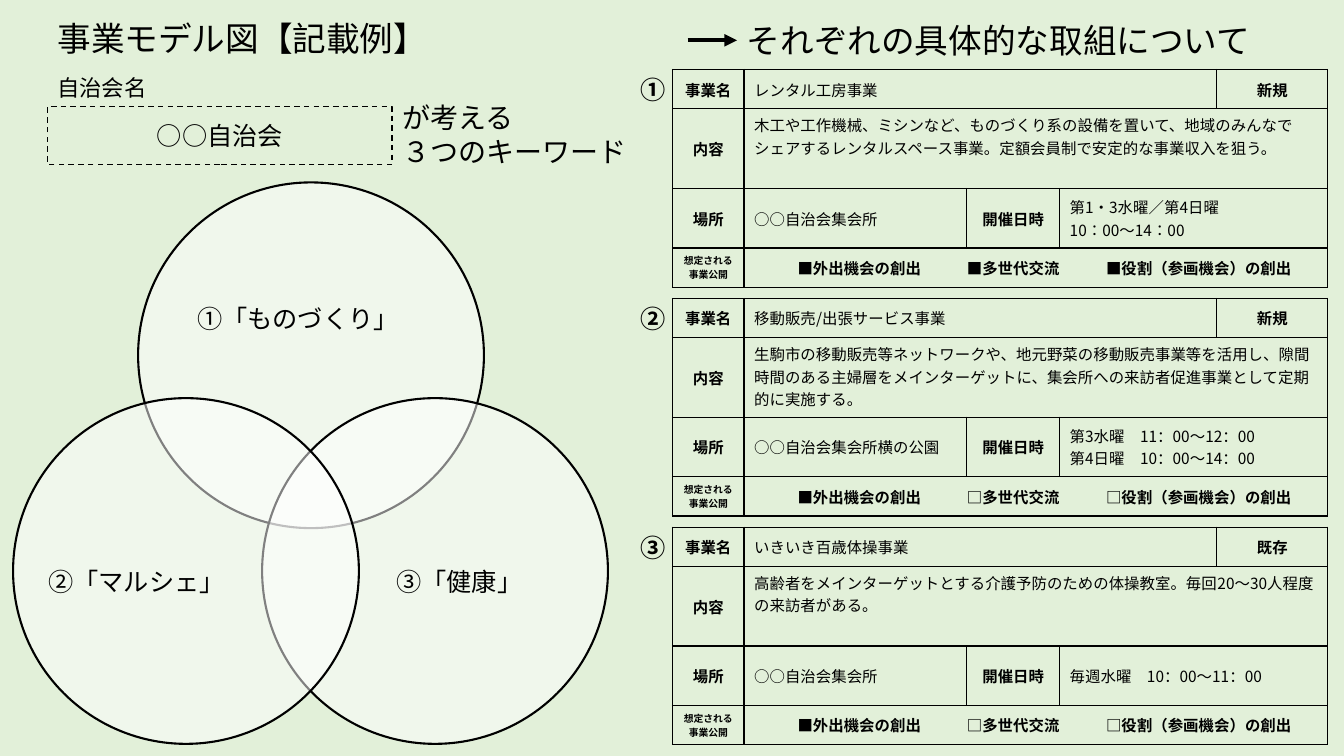
import pptx
import pptx.util
import pptx.dml.color
import pptx.enum.dml
import pptx.enum.shapes
import pptx.enum.text
import pptx.oxml.ns
from lxml import etree

PX = 9144  # EMU, 100 px to the inch
COLORS = {"background": "E2F0D9", "ink": "000000", "circle": "FFFFFF"}
ARIAL, NOTO = "Arial", "Noto Sans CJK JP"
ALIGN = pptx.enum.text.PP_ALIGN
ANCHOR = pptx.enum.text.MSO_ANCHOR
SHAPE = pptx.enum.shapes.MSO_SHAPE

COLUMNS = [71, 221, 92, 156, 110]
ROWS = [39, 79, 59, 39]
TABLE_LEFT, TABLE_TOP, TABLE_PITCH = 667, 69, 227
EFFECT_STOPS = [43, 211, 349]
EFFECTS = ["外出機会の創出", "多世代交流", "役割（参画機会）の創出"]

PROJECTS = [
    dict(number="①", name="レンタル工房事業", status="新規",
         content="木工や工作機械、ミシンなど、ものづくり系の設備を置いて、地域のみんなで"
                 "シェアするレンタルスペース事業。定額会員制で安定的な事業収入を狙う。",
         place="○○自治会集会所", schedule="第1・3水曜／第4日曜\n10：00～14：00", marks="■■■"),
    dict(number="②", name="移動販売/出張サービス事業", status="新規",
         content="生駒市の移動販売等ネットワークや、地元野菜の移動販売事業等を活用し、隙間"
                 "時間のある主婦層をメインターゲットに、集会所への来訪者促進事業として定期的に実施する。",
         place="○○自治会集会所横の公園",
         schedule="第3水曜　11：00～12：00\n第4日曜　10：00～14：00", marks="■□□"),
    dict(number="③", name="いきいき百歳体操事業", status="既存",
         content="高齢者をメインターゲットとする介護予防のための体操教室。毎回20～30人程度の来訪者がある。",
         place="○○自治会集会所", schedule="毎週水曜　10：00～11：00", marks="■□□"),
]

# circle left, circle top, keyword, keyword box
KEYWORDS = [
    (137, 181, "①「ものづくり」　", (182, 241, 252, 154)),
    (260, 395, "③「健康」　", (365, 484, 206, 189)),
    (13, 395, "②「マルシェ」　", (45, 484, 206, 189)),
]
CIRCLE_SIZE = 343


def px(*lengths):
    return [pptx.util.Emu(length * PX) for length in lengths]


def rgb(name):
    return pptx.dml.color.RGBColor.from_string(COLORS[name])


def add_xml(parent, tag, **attributes):
    return etree.SubElement(parent, pptx.oxml.ns.qn(tag), attributes)


def write(frame, text, size=11, font=NOTO, bold=False, align=ALIGN.LEFT,
          line_spacing=None, tab_stops=()):
    """Fill a text frame, one paragraph for each line of text."""
    for index, line in enumerate(text.split("\n")):
        paragraph = frame.add_paragraph() if index else frame.paragraphs[0]
        paragraph.alignment = align
        if line_spacing:
            paragraph.line_spacing = line_spacing
        if tab_stops:
            stops = add_xml(paragraph._p.get_or_add_pPr(), "a:tabLst")
            for stop in tab_stops:
                add_xml(stops, "a:tab", pos=str(stop * PX), algn="l")
        run = paragraph.add_run()
        run.text = line
        run.font.size = pptx.util.Pt(size)
        run.font.bold = bold
        run.font.name = font
        run.font.color.rgb = rgb("ink")
        add_xml(run.font._element, "a:ea", typeface=NOTO)


def add_label(slide, box, text, **text_format):
    label = slide.shapes.add_textbox(*px(*box))
    label.text_frame.word_wrap = False
    write(label.text_frame, text, **text_format)
    return label


def add_title(slide):
    title = slide.shapes.title
    title.left, title.top, title.width, title.height = px(47, 13, 390, 50)
    frame = title.text_frame
    frame.word_wrap = False
    frame.auto_size = pptx.enum.text.MSO_AUTO_SIZE.NONE
    frame.vertical_anchor = ANCHOR.TOP
    write(frame, "事業モデル図【記載例】", size=24, line_spacing=1.0)


def add_outlined(slide, kind, box, width):
    shape = slide.shapes.add_shape(kind, *px(*box))
    shape.shadow.inherit = False
    shape.fill.background()
    shape.line.color.rgb = rgb("ink")
    shape.line.width = pptx.util.Pt(width)
    return shape


def add_association_box(slide):
    association = add_outlined(slide, SHAPE.RECTANGLE, (47, 106, 342, 57), 1)
    association.line.dash_style = pptx.enum.dml.MSO_LINE.DASH
    association.text_frame.vertical_anchor = ANCHOR.MIDDLE
    write(association.text_frame, "○○自治会", size=18, align=ALIGN.CENTER)


def add_keyword_circle(slide, left, top, keyword, keyword_box):
    circle = add_outlined(slide, SHAPE.OVAL, (left, top, CIRCLE_SIZE, CIRCLE_SIZE), 1.5)
    circle.fill.solid()
    circle.fill.fore_color.rgb = rgb("circle")
    fill = circle._element.spPr.find(pptx.oxml.ns.qn("a:solidFill"))
    add_xml(fill[0], "a:alpha", val="50000")
    label = add_label(slide, keyword_box, keyword, size=18, align=ALIGN.CENTER,
                      line_spacing=0.9)
    frame = label.text_frame
    frame.word_wrap = True
    frame.vertical_anchor = ANCHOR.MIDDLE
    frame.margin_left = frame.margin_top = frame.margin_right = frame.margin_bottom = 0


def add_heading_arrow(slide, heading):
    arrow = slide.shapes.add_connector(
        pptx.enum.shapes.MSO_CONNECTOR.STRAIGHT, *px(682, 40, 731, 40))
    arrow.end_connect(heading, 1)
    arrow.line.color.rgb = rgb("ink")
    arrow.line.width = pptx.util.Pt(3)
    add_xml(arrow.line._get_or_add_ln(), "a:tailEnd", type="triangle")
    add_xml(arrow._element.spPr, "a:effectLst")


def style_cell(cell):
    properties = cell._tc.get_or_add_tcPr()
    for side in ("a:lnL", "a:lnR", "a:lnT", "a:lnB"):
        border = add_xml(properties, side, w="12700")
        add_xml(add_xml(border, "a:solidFill"), "a:srgbClr", val=COLORS["ink"])
    cell.fill.background()
    cell.vertical_anchor = ANCHOR.MIDDLE


def add_project_table(slide, top, project):
    table = slide.shapes.add_table(
        len(ROWS), len(COLUMNS), *px(TABLE_LEFT, top, sum(COLUMNS), sum(ROWS))).table
    table.first_row = table.horz_banding = False
    for column, width in zip(table.columns, px(*COLUMNS)):
        column.width = width
    for row, height in zip(table.rows, px(*ROWS)):
        row.height = height
    for cell in table.iter_cells():
        style_cell(cell)
    for row, first, last in ((0, 1, 3), (1, 1, 4), (2, 3, 4), (3, 1, 4)):
        table.cell(row, first).merge(table.cell(row, last))

    def head(row, column, text, size=11):
        write(table.cell(row, column).text_frame, text, size=size, bold=True,
              align=ALIGN.CENTER)

    head(0, 0, "事業名")
    head(0, 4, project["status"])
    head(1, 0, "内容")
    head(2, 0, "場所")
    head(2, 2, "開催日時")
    head(3, 0, "想定される事業公開", size=7)
    for row, column, part in ((0, 1, "name"), (1, 1, "content"),
                              (2, 1, "place"), (2, 3, "schedule")):
        write(table.cell(row, column).text_frame, project[part])
    table.cell(1, 1).vertical_anchor = ANCHOR.TOP
    effects = "".join(f"\t{mark}{effect}" for mark, effect in zip(project["marks"], EFFECTS))
    write(table.cell(3, 1).text_frame, effects, bold=True, tab_stops=EFFECT_STOPS)


def main():
    deck = pptx.Presentation()
    deck.slide_width, deck.slide_height = px(1333, 750)
    slide = deck.slides.add_slide(deck.slide_layouts[5])
    slide.background.fill.solid()
    slide.background.fill.fore_color.rgb = rgb("background")

    add_title(slide)
    add_label(slide, (47, 69, 110, 37), "自治会名", size=16, font=ARIAL)
    add_label(slide, (389, 95, 245, 77), "が考える\n３つのキーワード", size=20, font=ARIAL)
    add_association_box(slide)
    for keyword in KEYWORDS:
        add_keyword_circle(slide, *keyword)

    heading = add_label(slide, (731, 15, 525, 50), "それぞれの具体的な取組について",
                        size=24, font=ARIAL)
    add_heading_arrow(slide, heading)
    for index, project in enumerate(PROJECTS):
        top = TABLE_TOP + index * TABLE_PITCH
        add_label(slide, (625, top, 45, 48), project["number"], size=18, bold=True)
        add_project_table(slide, top, project)
    deck.save("out.pptx")


if __name__ == "__main__":
    main()
